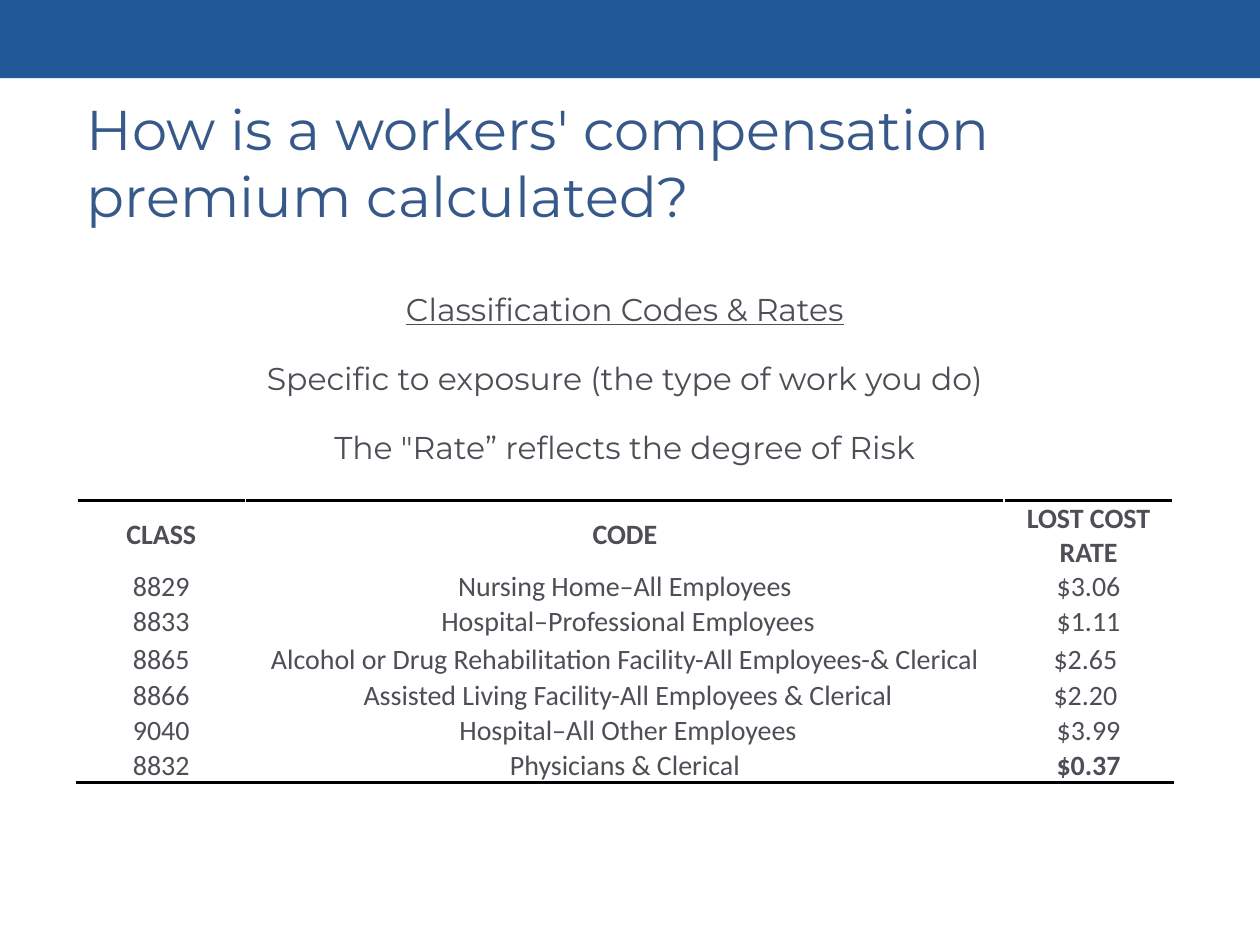
from lxml import etree
from pptx import Presentation
from pptx.dml.color import RGBColor
from pptx.enum.shapes import MSO_SHAPE
from pptx.enum.text import MSO_ANCHOR, PP_ALIGN
from pptx.oxml.ns import qn
from pptx.util import Inches, Pt

RECTANGLE = MSO_SHAPE.RECTANGLE
CENTER, LEFT = PP_ALIGN.CENTER, PP_ALIGN.LEFT
MIDDLE, BOTTOM = MSO_ANCHOR.MIDDLE, MSO_ANCHOR.BOTTOM

BAND_BLUE = "215896"
TITLE_BLUE = "365989"
TEXT_GRAY = "4D4E56"
WHITE = "FFFFFF"
BLACK = "000000"

TITLE = "How is a workers' compensation premium calculated?"
POINTS = [
    "Classification Codes & Rates",
    "Specific to exposure (the type of work you do)",
    "The \"Rate” reflects the degree of Risk",
]
RATES = [
    ("CLASS", "CODE", "LOST COST RATE"),
    ("8829", "Nursing Home–All Employees", "$3.06"),
    ("8833", " Hospital–Professional Employees", "$1.11"),
    ("8865", "Alcohol or Drug Rehabilitation Facility-All Employees-& Clerical", "$2.65 "),
    ("8866", " Assisted Living Facility-All Employees & Clerical", "$2.20 "),
    ("9040", " Hospital–All Other Employees", "$3.99"),
    ("8832", "Physicians & Clerical", "$0.37"),
]
COLUMN_WIDTHS = [1.34, 6.02, 1.34]
ROW_HEIGHTS = [0.54, 0.27, 0.27, 0.31, 0.27, 0.27, 0.27]


def color(value):
    return RGBColor.from_string(value)


def style_text(para, font_name, size, text_color, align, bold=False):
    para.alignment = align
    for span in para.runs:
        span.font.name = font_name
        span.font.size = Pt(size)
        span.font.bold = bold
        span.font.color.rgb = color(text_color)


def add_text_frame(page, left, top, width, height, top_inset):
    box = page.shapes.add_textbox(Inches(left), Inches(top), Inches(width), Inches(height))
    frame = box.text_frame
    frame.word_wrap = True
    frame.margin_top = Inches(top_inset)
    return frame


def add_band(page, left, top, width, height):
    band = page.shapes.add_shape(
        RECTANGLE, Inches(left), Inches(top), Inches(width), Inches(height)
    )
    band.shadow.inherit = False
    band.fill.solid()
    band.fill.fore_color.rgb = color(BAND_BLUE)
    band.line.fill.background()


def add_title(page, left, top, width, height):
    frame = add_text_frame(page, left, top, width, height, 0.07)
    frame.text = TITLE
    style_text(frame.paragraphs[0], "Montserrat", 32, TITLE_BLUE, LEFT)


def add_points(page, left, top, width, height):
    frame = add_text_frame(page, left, top, width, height, 0.61)
    frame.text = "\n".join(POINTS)
    for para in frame.paragraphs:
        style_text(para, "Montserrat", 18, TEXT_GRAY, CENTER)
    for para in frame.paragraphs[1:]:
        para.space_before = Pt(18)
    frame.paragraphs[0].runs[0].font.underline = True


def add_rule(cell, side):
    properties = cell._tc.get_or_add_tcPr()
    line = etree.Element(qn(f"a:{side}"), w=str(Pt(2)))
    fill = etree.SubElement(line, qn("a:solidFill"))
    etree.SubElement(fill, qn("a:srgbClr"), val=BLACK)
    properties.insert(0, line)


def fill_cell(cell, text, anchor, bold):
    cell.text = text
    cell.vertical_anchor = anchor
    cell.margin_left = cell.margin_right = cell.margin_top = Inches(0.01)
    cell.margin_bottom = 0
    cell.fill.solid()
    cell.fill.fore_color.rgb = color(WHITE)
    style_text(cell.text_frame.paragraphs[0], "Calibri", 16, TEXT_GRAY, CENTER, bold)


def add_rates(page, left, top, width, height):
    table = page.shapes.add_table(
        len(RATES), len(COLUMN_WIDTHS),
        Inches(left), Inches(top), Inches(width), Inches(height),
    ).table
    table.horz_banding = False
    for column, column_width in zip(table.columns, COLUMN_WIDTHS):
        column.width = Inches(column_width)
    for row, row_height in zip(table.rows, ROW_HEIGHTS):
        row.height = Inches(row_height)

    last_row, last_column = len(RATES) - 1, len(COLUMN_WIDTHS) - 1
    for row_index, values in enumerate(RATES):
        header = row_index == 0
        for column_index, value in enumerate(values):
            cell = table.cell(row_index, column_index)
            bold = header or (row_index, column_index) == (last_row, last_column)
            fill_cell(cell, value, MIDDLE if header else BOTTOM, bold)
            if header:
                add_rule(cell, "lnT")
            elif row_index == last_row:
                add_rule(cell, "lnB")


def main():
    deck = Presentation()
    deck.slide_width, deck.slide_height = Inches(10), Inches(7.5)
    page = deck.slides.add_slide(deck.slide_layouts[6])
    add_band(page, 0, 0, 10, 0.62)
    add_points(page, 0.56, 1.69, 8.8, 2.28)
    add_title(page, 0.59, 0.68, 8.98, 1.04)
    add_rates(page, 0.61, 3.97, sum(COLUMN_WIDTHS), sum(ROW_HEIGHTS))
    deck.save("out.pptx")


if __name__ == "__main__":
    main()
